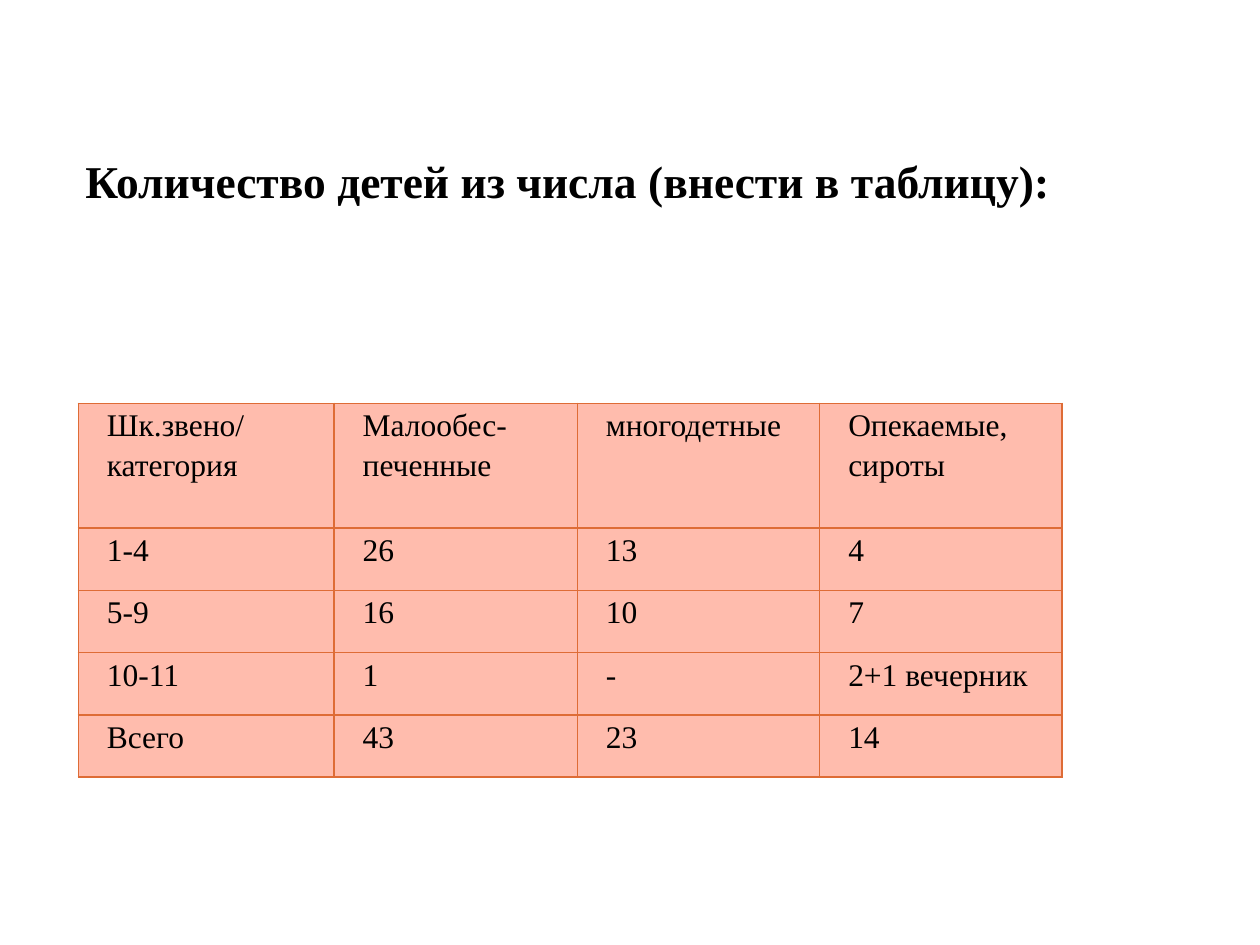
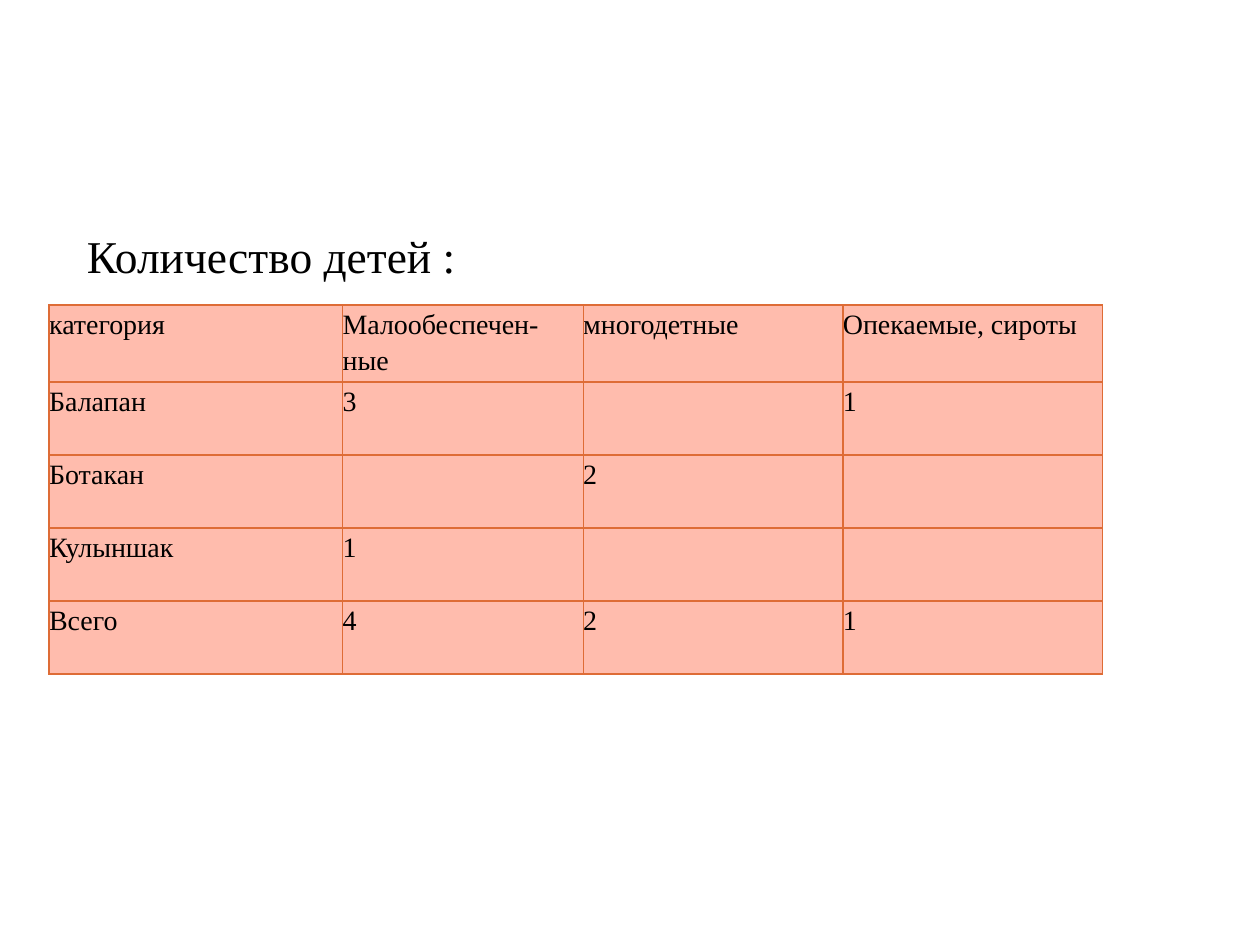
from pptx import Presentation
from pptx.dml.color import RGBColor
from pptx.enum.text import MSO_ANCHOR, PP_ALIGN
from pptx.oxml import parse_xml
from pptx.oxml.ns import nsdecls
from pptx.util import Pt

# Shared look
FONT = "Times New Roman"
BLACK = RGBColor(0x00, 0x00, 0x00)
SALMON = RGBColor(0xFF, 0xBC, 0xAD)
ORANGE = RGBColor(0xDE, 0x6C, 0x36)
BORDER_WIDTH = Pt(0.9)
HEADING_SIZE = 26
HEADING_WIDTH, HEADING_HEIGHT = 570, 381.6

# Table contents
SCHOOL_ROWS = [
    ("Шк.звено/ категория", "Малообес-печенные", "многодетные", "Опекаемые, сироты"),
    ("1-4", "26", "13", "4"),
    ("5-9", "16", "10", "7"),
    ("10-11", "1", "-", "2+1 вечерник"),
    ("Всего", "43", "23", "14"),
]
KINDERGARTEN_ROWS = [
    ("категория", "Малообеспечен-ные", "многодетные", "Опекаемые, сироты"),
    ("Балапан", "3", "", "1"),
    ("Ботакан", "", "2", ""),
    ("Кулыншак", "1", "", ""),
    ("Всего", "4", "2", "1"),
]


def add_span(para, text, size, bold=False):
    span = para.add_run()
    span.text = text
    span.font.name = FONT
    span.font.size = Pt(size)
    span.font.bold = bold
    span.font.color.rgb = BLACK


def add_heading(page, text, left, top, align=PP_ALIGN.LEFT, bold=False, inset=7.2):
    box = page.shapes.add_textbox(Pt(left), Pt(top), Pt(HEADING_WIDTH), Pt(HEADING_HEIGHT))
    frame = box.text_frame
    frame.word_wrap = True
    frame.vertical_anchor = MSO_ANCHOR.TOP
    frame.margin_left = Pt(inset)
    para = frame.paragraphs[0]
    para.alignment = align
    add_span(para, text, HEADING_SIZE, bold)


def add_borders(cell):
    properties = cell._tc.get_or_add_tcPr()
    for side in ("lnL", "lnR", "lnT", "lnB"):
        properties.append(parse_xml(
            f'<a:{side} {nsdecls("a")} w="{BORDER_WIDTH}"><a:solidFill>'
            f'<a:srgbClr val="{ORANGE}"/></a:solidFill></a:{side}>'))


def fill_cell(cell, text, size, side_inset, space_after):
    cell.margin_left = cell.margin_right = Pt(side_inset)
    cell.margin_top = cell.margin_bottom = 0
    add_borders(cell)
    cell.fill.solid()
    cell.fill.fore_color.rgb = SALMON
    para = cell.text_frame.paragraphs[0]
    para.line_spacing = 1.15
    para.space_after = Pt(space_after)
    if text:
        add_span(para, text, size)
    else:
        para.font.size = Pt(size)


def add_table(page, rows, left, top, widths, heights, size, side_inset=0, space_after=0):
    table = page.shapes.add_table(
        len(rows), len(widths), Pt(left), Pt(top), Pt(sum(widths)), Pt(sum(heights))).table
    table.first_row = table.horz_banding = False
    for column, width in zip(table.columns, widths):
        column.width = Pt(width)
    for row, height, texts in zip(table.rows, heights, rows):
        row.height = Pt(height)
        for cell, text in zip(row.cells, texts):
            fill_cell(cell, text, size, side_inset, space_after)


def main():
    deck = Presentation()
    deck.slide_width, deck.slide_height = Pt(720), Pt(540)
    blank = deck.slide_layouts[6]

    # School children by category
    page = deck.slides.add_slide(blank)
    add_heading(page, "Количество детей из числа (внести в таблицу):", 39.6, 84.2,
                align=PP_ALIGN.CENTER, bold=True)
    add_table(page, SCHOOL_ROWS, 44.7, 230.5, [146.2, 139, 138.5, 138.5],
              [71.3] + [35.6] * 4, size=18, side_inset=16.4, space_after=6.5)

    # Kindergarten groups by category
    page = deck.slides.add_slide(blank)
    add_heading(page, "Количество детей :", 36, 126.7, inset=13.6)
    add_table(page, KINDERGARTEN_ROWS, 28.1, 174.2, [167.7, 137.5, 148.4, 148.4],
              [41.7] * 5, size=16)

    deck.save("out.pptx")


if __name__ == "__main__":
    main()
